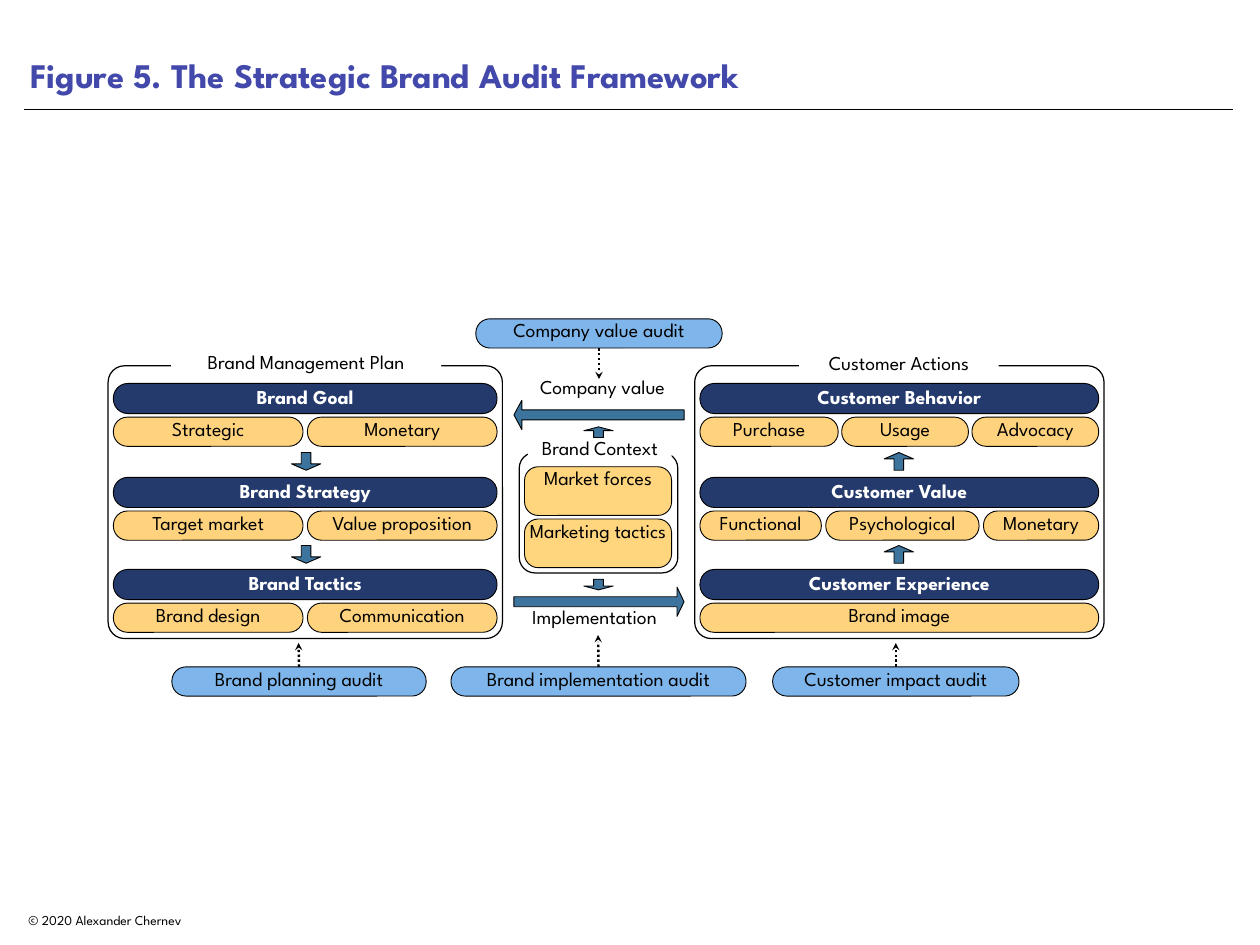
"""Build the strategic brand audit framework slide."""
from dataclasses import dataclass

from lxml import etree
from pptx import Presentation
from pptx.dml.color import RGBColor
from pptx.enum.dml import MSO_LINE
from pptx.enum.shapes import MSO_CONNECTOR, MSO_SHAPE
from pptx.enum.text import MSO_ANCHOR, MSO_AUTO_SIZE, PP_ALIGN
from pptx.oxml.ns import qn
from pptx.util import Emu, Pt

EMU_PER_PX = 9144
TITLE_ONLY = 5
TOP_SIDE, BOTTOM_SIDE = 0, 2
ROUNDED, RECTANGLE = MSO_SHAPE.ROUNDED_RECTANGLE, MSO_SHAPE.RECTANGLE
UP, DOWN = MSO_SHAPE.UP_ARROW, MSO_SHAPE.DOWN_ARROW
LEFT, RIGHT = MSO_SHAPE.LEFT_ARROW, MSO_SHAPE.RIGHT_ARROW
STRAIGHT, DOTTED = MSO_CONNECTOR.STRAIGHT, MSO_LINE.ROUND_DOT
TOP, MIDDLE, BOTTOM = MSO_ANCHOR.TOP, MSO_ANCHOR.MIDDLE, MSO_ANCHOR.BOTTOM
ALIGN_LEFT, ALIGN_CENTER = PP_ALIGN.LEFT, PP_ALIGN.CENTER
NO_AUTOFIT = MSO_AUTO_SIZE.NONE


@dataclass(frozen=True)
class Theme:
    font: str = "League Spartan"
    title_size: int = 28
    label_size: int = 16
    footer_size: int = 11
    title: str = "4349AA"
    ink: str = "000000"
    paper: str = "FFFFFF"
    header: str = "253A6C"
    detail: str = "FFD37D"
    context: str = "FFD67E"
    audit: str = "7EB5EA"
    arrow: str = "3D749D"
    thin: float = 0.75
    frame: float = 1
    rule: float = 0.5
    dots: float = 2


THEME = Theme()


def px(length):
    return Emu(length * EMU_PER_PX)


def write_text(frame, text, *, size=THEME.label_size, color=THEME.ink, bold=False,
               align=ALIGN_CENTER, anchor=TOP, spacing=0.8, inset=0):
    frame.word_wrap = True
    frame.auto_size = NO_AUTOFIT
    frame.vertical_anchor = anchor
    frame.margin_left = frame.margin_right = px(inset)
    frame.margin_top = frame.margin_bottom = px(inset)
    paragraph = frame.paragraphs[0]
    paragraph.alignment = align
    paragraph.line_spacing = spacing
    run = paragraph.add_run()
    run.text = text
    run.font.name = THEME.font
    run.font.size = Pt(size)
    run.font.bold = bold
    run.font.color.rgb = RGBColor.from_string(color)


class SlideBuilder:
    def __init__(self, slide, theme):
        self.slide = slide
        self.theme = theme

    def title(self, text, left, top, width, height):
        shape = self.slide.shapes.title
        shape.left, shape.top = px(left), px(top)
        shape.width, shape.height = px(width), px(height)
        write_text(shape.text_frame, text, size=self.theme.title_size,
                   color=self.theme.title, bold=True, align=ALIGN_LEFT,
                   anchor=BOTTOM, spacing=1.0, inset=7)

    def text(self, text, left, top, width, height, **text_format):
        box = self.slide.shapes.add_textbox(px(left), px(top), px(width), px(height))
        write_text(box.text_frame, text, **text_format)

    def shape(self, kind, left, top, width, height, fill=None, weight=None, adjustments=()):
        shape = self.slide.shapes.add_shape(kind, px(left), px(top), px(width), px(height))
        shape.shadow.inherit = False
        for index, value in enumerate(adjustments):
            shape.adjustments[index] = value
        if fill:
            shape.fill.solid()
            shape.fill.fore_color.rgb = RGBColor.from_string(fill)
        else:
            shape.fill.background()
        if weight:
            shape.line.color.rgb = RGBColor.from_string(self.theme.ink)
            shape.line.width = Pt(weight)
        else:
            shape.line.fill.background()
        return shape

    def pill(self, text, left, top, width, height, fill, rounding=0.48, **text_format):
        shape = self.shape(ROUNDED, left, top, width, height, fill,
                           self.theme.thin, (rounding,))
        write_text(shape.text_frame, text, **text_format)
        return shape

    def frame(self, left, top, width, height, rounding):
        self.shape(ROUNDED, left, top, width, height,
                   weight=self.theme.frame, adjustments=(rounding,))

    def label(self, text, left, top, width):
        shape = self.shape(RECTANGLE, left, top, width, 32, self.theme.paper)
        write_text(shape.text_frame, text, anchor=MIDDLE)

    def band(self, header, details, left, top, width):
        self.pill(header, left, top, width, 34, self.theme.header,
                  color=self.theme.paper, bold=True, spacing=0.9)
        spare = width - sum(detail_width for _, detail_width in details)
        gap = spare // max(len(details) - 1, 1)
        for text, detail_width in details:
            self.pill(text, left, top + 38, detail_width, 33, self.theme.detail)
            left += detail_width + gap

    def small_arrow(self, kind, center_x, center_y, height):
        self.shape(kind, center_x - 16, center_y - height // 2, 33, height,
                   self.theme.arrow, self.theme.thin, (0.33, 0.36))

    def long_arrow(self, kind, top, head):
        self.shape(kind, 580, top, 192, 33, self.theme.arrow,
                   self.theme.thin, (0.34, head))

    def line(self, start, end, weight):
        connector = self.slide.shapes.add_connector(STRAIGHT, *map(px, start + end))
        connector.line.color.rgb = RGBColor.from_string(self.theme.ink)
        connector.line.width = Pt(weight)
        etree.SubElement(connector.element.spPr, qn("a:effectLst"))
        return connector

    def audit(self, text, left, top, width, tip, side):
        pill = self.pill(text, left, top, width, 33, self.theme.audit)
        center = left + width // 2
        connector = self.line((center, top), (center, tip), self.theme.dots)
        connector.begin_connect(pill, side)
        connector.line.dash_style = DOTTED
        outline = connector.element.spPr.find(qn("a:ln"))
        etree.SubElement(outline, qn("a:tailEnd"), type="stealth")


PLAN_BANDS = [
    ("Brand Goal", [("Strategic", 214), ("Monetary", 214)]),
    ("Brand Strategy", [("Target market", 214), ("Value proposition", 214)]),
    ("Brand Tactics", [("Brand design", 214), ("Communication", 214)]),
]
CUSTOMER_BANDS = [
    ("Customer Behavior", [("Purchase", 156), ("Usage", 143), ("Advocacy", 143)]),
    ("Customer Value", [("Functional", 137), ("Psychological", 173), ("Monetary", 130)]),
    ("Customer Experience", [("Brand image", 450)]),
]
BAND_TOPS = (433, 539, 643)
AUDITS = [
    ("Brand planning audit", 194, 753, 287, 726, TOP_SIDE),
    ("Customer impact audit", 872, 753, 278, 726, TOP_SIDE),
    ("Company value audit", 537, 360, 278, 428, BOTTOM_SIDE),
    ("Brand implementation audit", 509, 753, 333, 717, TOP_SIDE),
]


def main():
    presentation = Presentation()
    presentation.slide_width, presentation.slide_height = px(1422), px(1067)
    slide = presentation.slides.add_slide(presentation.slide_layouts[TITLE_ONLY])
    builder = SlideBuilder(slide, THEME)

    builder.line((27, 124), (1392, 124), THEME.rule)
    builder.title("Figure 5. The Strategic Brand Audit Framework", 27, 0, 1364, 115)
    builder.text("© 2020 Alexander Chernev", 25, 1023, 347, 32, size=THEME.footer_size,
                 align=ALIGN_LEFT, anchor=BOTTOM, spacing=1.0, inset=7)

    builder.frame(122, 413, 445, 308, 0.06)
    builder.label("Brand Management Plan", 193, 395, 305)
    builder.frame(784, 413, 462, 308, 0.06)
    builder.label("Customer Actions", 902, 396, 225)
    for bands, left, width in ((PLAN_BANDS, 128, 433), (CUSTOMER_BANDS, 790, 450)):
        for (header, details), top in zip(bands, BAND_TOPS):
            builder.band(header, details, left, top, width)
    for center_y in (521, 626):
        builder.small_arrow(DOWN, 345, center_y, 20)
        builder.small_arrow(UP, 1014, center_y, 20)

    builder.frame(586, 511, 179, 136, 0.13)
    builder.label("Brand Context", 596, 492, 162)
    for text, top in (("Market forces", 527), ("Marketing tactics", 586)):
        builder.pill(text, 592, top, 166, 55, THEME.context, rounding=0.28)
    builder.small_arrow(UP, 675, 488, 12)
    builder.small_arrow(DOWN, 675, 660, 12)
    builder.long_arrow(LEFT, 452, 0.27)
    builder.long_arrow(RIGHT, 663, 0.24)
    builder.text("Company value", 582, 428, 196, 32)
    builder.text("Implementation", 573, 688, 196, 32)

    for audit in AUDITS:
        builder.audit(*audit)

    presentation.save("out.pptx")


if __name__ == "__main__":
    main()
